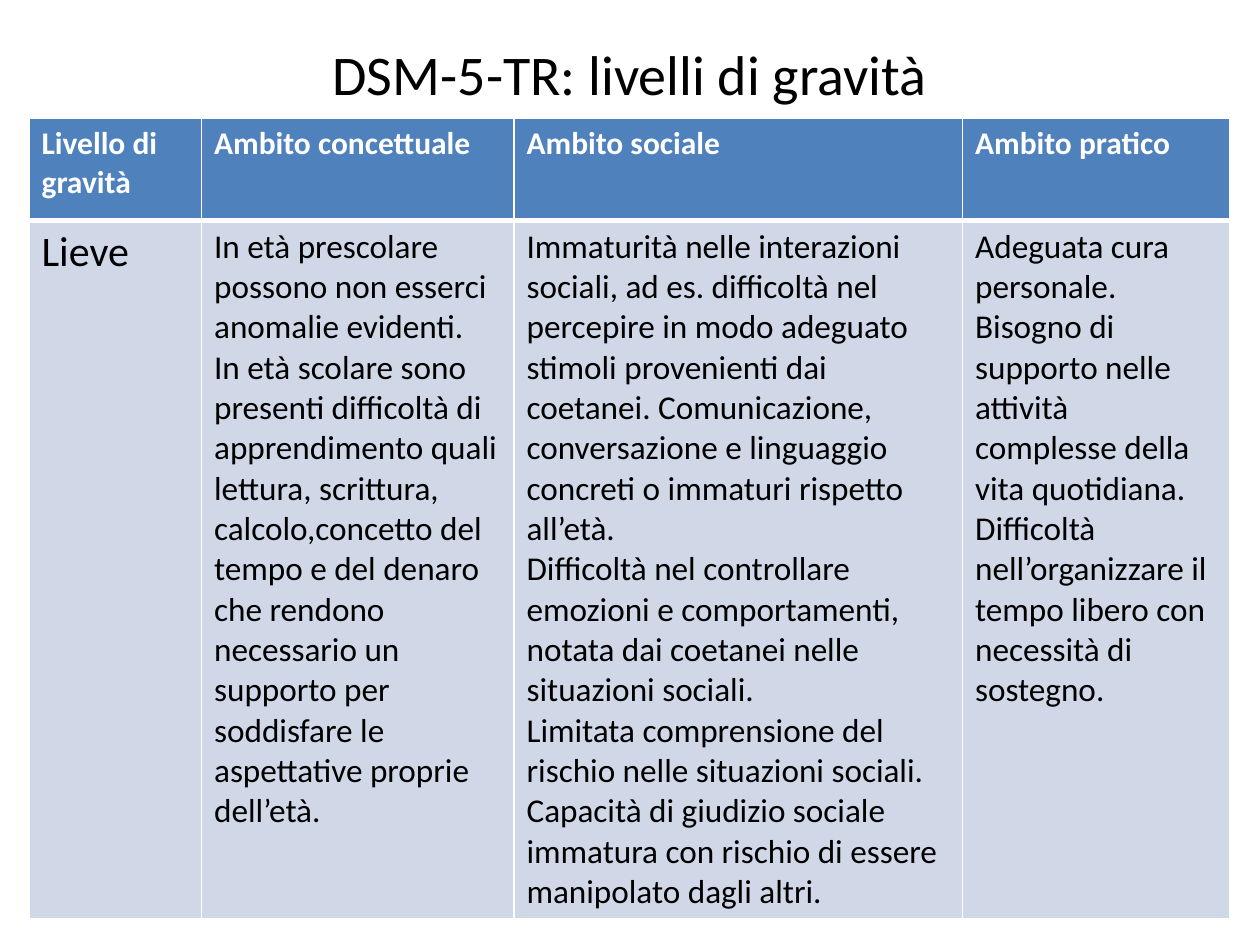
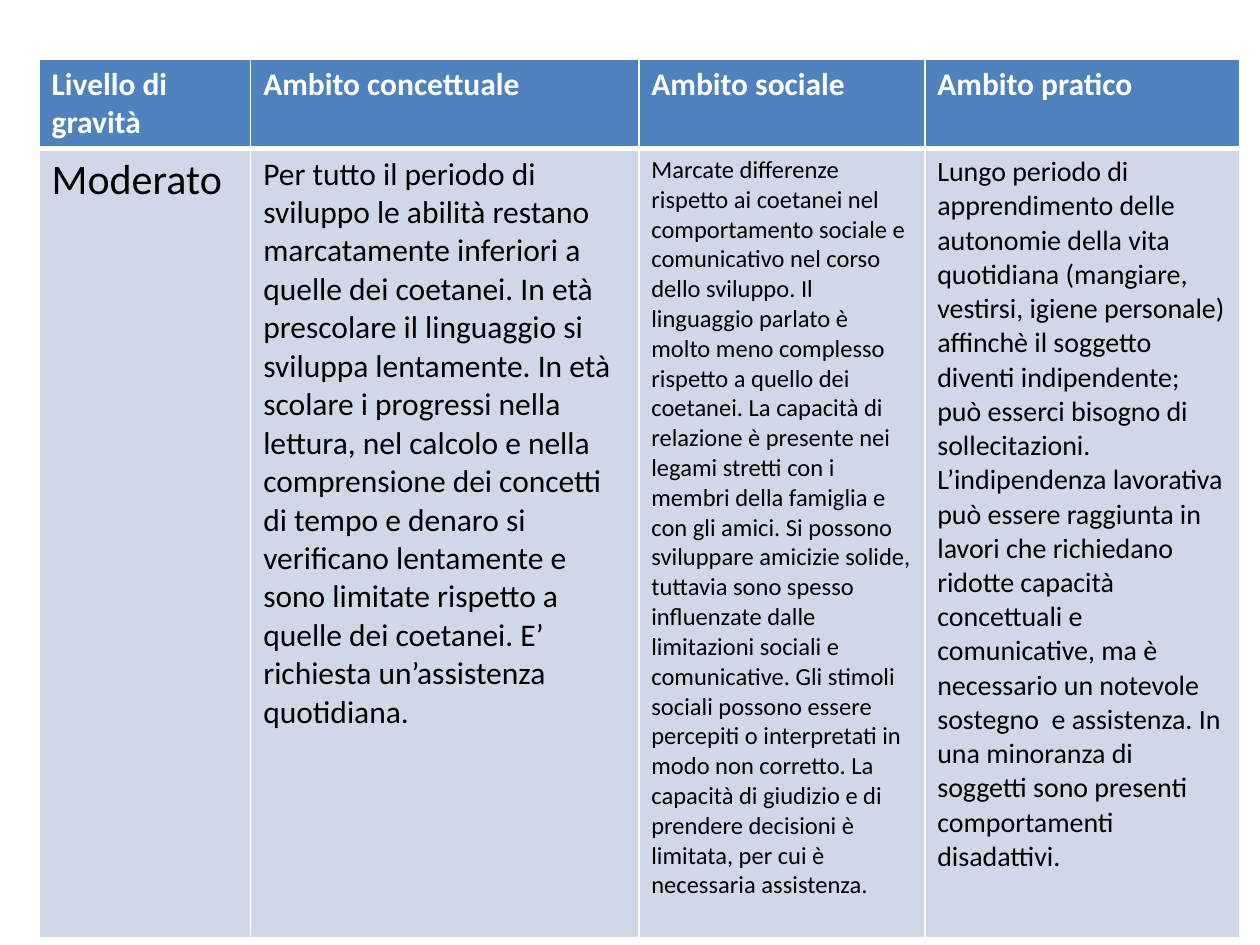
from dataclasses import dataclass

from lxml.etree import SubElement
from pptx import Presentation
from pptx.dml.color import RGBColor
from pptx.enum.text import MSO_ANCHOR, PP_ALIGN
from pptx.oxml.ns import qn
from pptx.slide import Slide
from pptx.table import _Cell as Cell
from pptx.text.text import TextFrame
from pptx.util import Emu, Pt

EMU_PER_PX = 9144  # 100 px to the inch
FONT = "Calibri"
WHITE = RGBColor(0xFF, 0xFF, 0xFF)
BLACK = RGBColor(0x00, 0x00, 0x00)
HEADER_BLUE = RGBColor(0x4F, 0x81, 0xBD)
BODY_BLUE = RGBColor(0xD0, 0xD8, 0xE8)

TITLE_ONLY, BLANK = 5, 6
THIN, THICK = 1, 3
HEADINGS = ("Livello di gravità", "Ambito concettuale", "Ambito sociale", "Ambito pratico")


@dataclass(frozen=True)
class Entry:
    text: str
    size: int


@dataclass(frozen=True)
class SeverityLevel:
    """One slide: a severity level described in three domains."""
    left: int
    top: int
    column_widths: tuple[int, ...]
    row_heights: tuple[int, int]
    entries: tuple[Entry, ...]
    title: str = ""


LEVELS = (
    SeverityLevel(
        left=23, top=94, column_widths=(137, 248, 356, 212), row_heights=(81, 554),
        title="DSM-5-TR: livelli di gravità",
        entries=(
            Entry("Lieve", 24),
            Entry("In età prescolare possono non esserci anomalie evidenti.\n"
                  "In età scolare sono presenti difficoltà di apprendimento quali lettura, "
                  "scrittura, calcolo,concetto del tempo e del denaro che rendono necessario "
                  "un supporto per soddisfare le aspettative proprie dell’età.", 19),
            Entry("Immaturità nelle interazioni sociali, ad es. difficoltà nel percepire in "
                  "modo adeguato stimoli provenienti dai coetanei. Comunicazione, "
                  "conversazione e linguaggio concreti o immaturi rispetto all’età.\n"
                  "Difficoltà nel controllare emozioni e comportamenti, notata dai coetanei "
                  "nelle situazioni sociali.\n"
                  "Limitata comprensione del rischio nelle situazioni sociali.\n"
                  "Capacità di giudizio sociale immatura con rischio di essere manipolato "
                  "dagli altri.", 19),
            Entry("Adeguata cura personale.\n"
                  "Bisogno di supporto nelle attività complesse della vita quotidiana. "
                  "Difficoltà nell’organizzare il tempo libero con necessità di sostegno.", 19),
        ),
    ),
    SeverityLevel(
        left=31, top=47, column_widths=(168, 308, 227, 250), row_heights=(70, 626),
        entries=(
            Entry("Moderato", 24),
            Entry("Per tutto il periodo di sviluppo le abilità restano marcatamente inferiori "
                  "a quelle dei coetanei. In età prescolare il linguaggio si sviluppa "
                  "lentamente. In età scolare i progressi nella lettura, nel calcolo e nella "
                  "comprensione dei concetti di tempo e denaro si verificano lentamente e sono "
                  "limitate rispetto a quelle dei coetanei. E’ richiesta un’assistenza "
                  "quotidiana.", 18),
            Entry("Marcate differenze rispetto ai coetanei nel comportamento sociale e "
                  "comunicativo nel corso dello sviluppo. Il linguaggio parlato è molto meno "
                  "complesso rispetto a quello dei coetanei. La capacità di relazione è "
                  "presente nei legami stretti con i membri della famiglia e con gli amici. "
                  "Si possono sviluppare amicizie solide, tuttavia sono spesso influenzate "
                  "dalle limitazioni sociali e comunicative. Gli stimoli sociali possono "
                  "essere percepiti o interpretati in modo non corretto. La capacità di "
                  "giudizio e di prendere decisioni è limitata, per cui è necessaria "
                  "assistenza.", 14),
            Entry("Lungo periodo di apprendimento delle autonomie della vita quotidiana "
                  "(mangiare, vestirsi, igiene personale) affinchè il soggetto diventi "
                  "indipendente; può esserci bisogno di sollecitazioni. L’indipendenza "
                  "lavorativa può essere raggiunta in lavori che richiedano ridotte capacità "
                  "concettuali e comunicative, ma è necessario un notevole sostegno  e "
                  "assistenza. In una minoranza di soggetti sono presenti comportamenti "
                  "disadattivi.", 16),
        ),
    ),
)


def px(length: int) -> Emu:
    return Emu(length * EMU_PER_PX)


def write_text(frame: TextFrame, text: str, *, size: int, color: RGBColor = BLACK,
               bold: bool = False, align: PP_ALIGN = PP_ALIGN.LEFT) -> None:
    frame.text = text
    for paragraph in frame.paragraphs:
        paragraph.alignment = align
        for run in paragraph.runs:
            run.font.name = FONT
            run.font.size = Pt(size)
            run.font.bold = bold
            run.font.color.rgb = color


def set_borders(cell: Cell, *, top: int = THIN, bottom: int = THIN) -> None:
    """Give the cell white borders; call before filling, as lines precede the fill."""
    properties = cell._tc.get_or_add_tcPr()
    for tag, width in (("a:lnL", THIN), ("a:lnR", THIN), ("a:lnT", top), ("a:lnB", bottom)):
        line = SubElement(properties, qn(tag), w=str(Pt(width)))
        fill = SubElement(line, qn("a:solidFill"))
        SubElement(fill, qn("a:srgbClr"), val=str(WHITE))


def fill_cell(cell: Cell, color: RGBColor) -> None:
    cell.fill.solid()
    cell.fill.fore_color.rgb = color


def add_title(slide: Slide, text: str) -> None:
    title = slide.shapes.title
    title.left, title.top, title.width, title.height = px(50), px(30), px(900), px(56)
    title.text_frame.vertical_anchor = MSO_ANCHOR.MIDDLE
    write_text(title.text_frame, text, size=32, align=PP_ALIGN.CENTER)


def add_level_table(slide: Slide, level: SeverityLevel) -> None:
    table = slide.shapes.add_table(
        2, len(HEADINGS), px(level.left), px(level.top),
        px(sum(level.column_widths)), px(sum(level.row_heights))).table
    for row, height in zip(table.rows, level.row_heights):
        row.height = px(height)
    for index, (width, heading, entry) in enumerate(
            zip(level.column_widths, HEADINGS, level.entries)):
        table.columns[index].width = px(width)
        header, body = table.cell(0, index), table.cell(1, index)
        set_borders(header, bottom=THICK)
        fill_cell(header, HEADER_BLUE)
        write_text(header.text_frame, heading, size=18, color=WHITE, bold=True)
        set_borders(body, top=THICK)
        fill_cell(body, BODY_BLUE)
        write_text(body.text_frame, entry.text, size=entry.size)


def main() -> None:
    presentation = Presentation()
    presentation.slide_width, presentation.slide_height = px(1000), px(750)
    for level in LEVELS:
        layout = presentation.slide_layouts[TITLE_ONLY if level.title else BLANK]
        slide = presentation.slides.add_slide(layout)
        if level.title:
            add_title(slide, level.title)
        add_level_table(slide, level)
    presentation.save("out.pptx")


if __name__ == "__main__":
    main()
